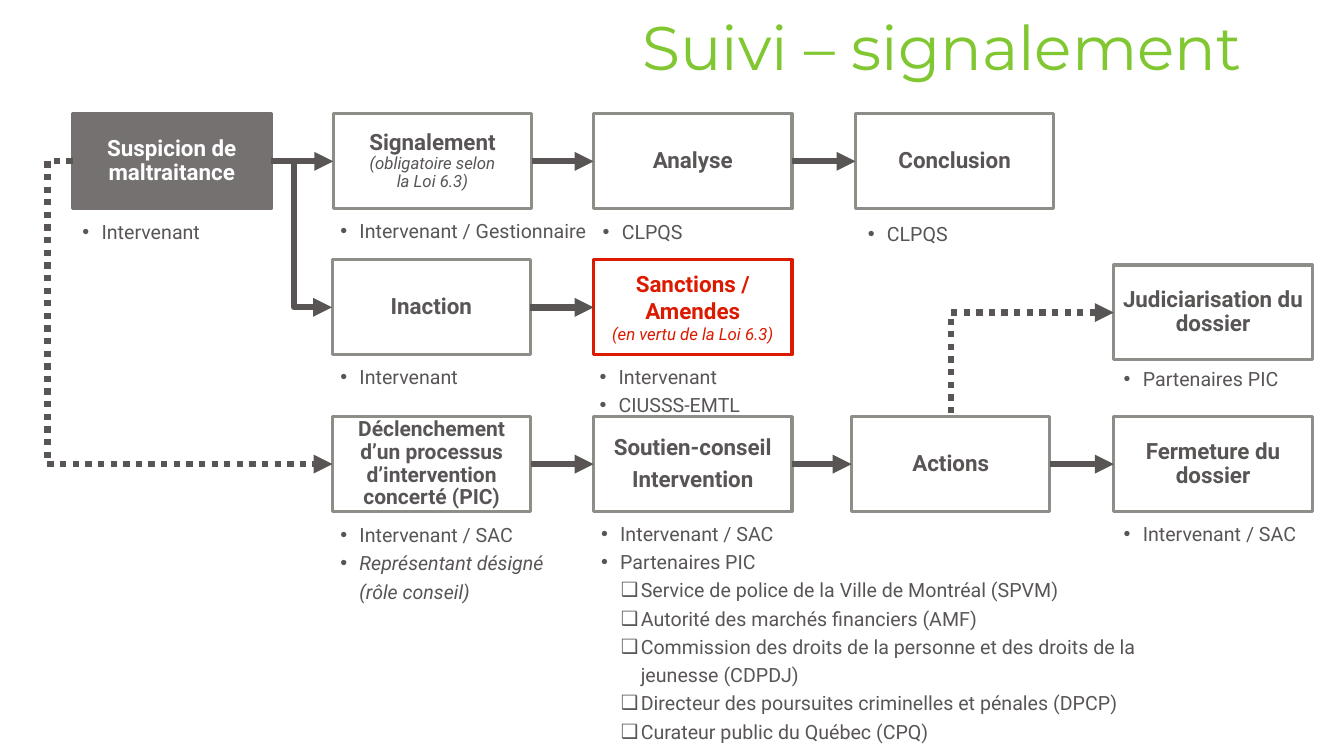
from lxml import etree
from pptx import Presentation
from pptx.dml.color import RGBColor
from pptx.enum import dml, shapes, text
from pptx.oxml import ns
from pptx.util import Cm, Pt

GREY, RED, WHITE = "595555", "DB1A00", "FFFFFF"
BORDER, DARK, GREEN = "8E8E89", "767171", "81C731"
BOX_W, BOX_H = 5, 2.39
TOP, LEFT, RIGHT = 0, 1, 3


def rgb(value):
    return RGBColor.from_string(value)


def add_child(parent, tag, **attrs):
    return etree.SubElement(parent, ns.qn(tag), attrs)


def style(p, size, color, name="Roboto", bold=False, italic=False):
    font = p.font
    font.name, font.size = name, Pt(size)
    font.bold, font.italic = bold, italic
    font.color.rgb = rgb(color)


def add_paragraph(tf, first, content):
    p = tf.paragraphs[0] if first else tf.add_paragraph()
    p.text = content
    return p


def add_title(s, content):
    tf = s.shapes.add_textbox(Cm(4.93), Cm(-0.56), Cm(26.62), Cm(3.68)).text_frame
    tf.word_wrap = True
    tf.vertical_anchor = text.MSO_ANCHOR.MIDDLE
    p = add_paragraph(tf, True, content)
    p.alignment = text.PP_ALIGN.RIGHT
    p.line_spacing = 0.9
    style(p, 44, GREEN, "Montserrat")


def add_box(s, x, y, heads, notes=(), size=16, color=GREY, fill=WHITE,
            border=BORDER, spacing=0.9):
    sp = s.shapes.add_shape(shapes.MSO_SHAPE.RECTANGLE, Cm(x), Cm(y), Cm(BOX_W), Cm(BOX_H))
    sp.shadow.inherit = False
    sp.fill.solid()
    sp.fill.fore_color.rgb = rgb(fill)
    sp.line.color.rgb = rgb(border)
    sp.line.width = Pt(2.25)
    tf = sp.text_frame
    tf.word_wrap = True
    tf.vertical_anchor = text.MSO_ANCHOR.MIDDLE
    tf.margin_left = tf.margin_right = tf.margin_top = tf.margin_bottom = Cm(0.15)
    for i, content in enumerate([*heads, *notes]):
        p = add_paragraph(tf, i == 0, content)
        p.alignment = text.PP_ALIGN.CENTER
        p.line_spacing = spacing
        if i < len(heads) - 1:
            p.space_after = Pt(5.6)
        is_note = i >= len(heads)
        style(p, 12 if is_note else size, color, bold=not is_note, italic=is_note)
    return sp


def add_bullets(s, x, y, w, h, items, subitems=(), italic_item=None):
    tf = s.shapes.add_textbox(Cm(x), Cm(y), Cm(w), Cm(h)).text_frame
    tf.word_wrap = True
    for i, content in enumerate([*items, *subitems]):
        p = add_paragraph(tf, i == 0, content)
        p.line_spacing = 1.2
        margin, hang, mark = (0.48, 0.48, "•") if i < len(items) else (1, 0.5, "❑")
        pPr = p._p.get_or_add_pPr()
        pPr.set("marL", str(Cm(margin)))
        pPr.set("indent", str(-Cm(hang)))
        add_child(pPr, "a:buFont", typeface="Arial")
        add_child(pPr, "a:buChar", char=mark)
        style(p, 14, GREY, italic=content == italic_item)


def add_arrow(s, start, end, kind=shapes.MSO_CONNECTOR.STRAIGHT, sites=(RIGHT, LEFT),
              dotted=False, bend=None, preset=None, arrow="a:tailEnd"):
    c = s.shapes.add_connector(kind, 0, 0, 0, 0)
    c.begin_connect(start, sites[0])
    c.end_connect(end, sites[1])
    c.line.color.rgb = rgb(GREY)
    c.line.width = Pt(4.5)
    if dotted:
        c.line.dash_style = dml.MSO_LINE.ROUND_DOT
    spPr = c._element.spPr
    add_child(spPr.find(ns.qn("a:ln")), arrow, type="triangle")
    add_child(spPr, "a:effectLst")
    geom = spPr.find(ns.qn("a:prstGeom"))
    if preset:
        geom.set("prst", preset)
    if bend is not None:
        add_child(geom.find(ns.qn("a:avLst")), "a:gd", name="adj1", fmla=f"val {bend}")


def main():
    prs = Presentation()
    prs.slide_width, prs.slide_height = Cm(33.87), Cm(19.05)
    s = prs.slides.add_slide(prs.slide_layouts[6])
    add_title(s, "Suivi – signalement")

    row1, row2, row3 = 2.87, 6.55, 10.5
    suspicion = add_box(s, 1.83, row1, ["Suspicion de maltraitance"],
                        color=WHITE, fill=DARK, border=DARK)
    signalement = add_box(s, 8.4, row1, ["Signalement"],
                          ["(obligatoire selon", "la Loi 6.3)"])
    analyse = add_box(s, 14.96, row1, ["Analyse"])
    conclusion = add_box(s, 21.56, row1, ["Conclusion"])
    inaction = add_box(s, 8.37, row2, ["Inaction"])
    sanctions = add_box(s, 14.96, row2, ["Sanctions / Amendes"], ["(en vertu de la Loi 6.3)"],
                        color=RED, border=RED, spacing=1)
    pic = add_box(s, 8.38, row3,
                  ["Déclenchement d’un processus d’intervention concerté (PIC)"], size=15)
    soutien = add_box(s, 14.96, row3, ["Soutien-conseil", "Intervention"])
    actions = add_box(s, 21.46, row3, ["Actions"])
    judiciarisation = add_box(s, 28.07, 6.68, ["Judiciarisation du dossier"])
    fermeture = add_box(s, 28.07, row3, ["Fermeture du dossier"])

    for start, end in [(suspicion, signalement), (signalement, analyse),
                       (analyse, conclusion), (inaction, sanctions), (pic, soutien),
                       (soutien, actions), (actions, fermeture)]:
        add_arrow(s, start, end)
    elbow = shapes.MSO_CONNECTOR.ELBOW
    add_arrow(s, suspicion, inaction, elbow, bend=37900)
    add_arrow(s, suspicion, pic, elbow, (LEFT, LEFT), dotted=True, bend=-9700)
    add_arrow(s, judiciarisation, actions, elbow, (LEFT, TOP), dotted=True,
              preset="bentConnector2", arrow="a:headEnd")

    designated = "Représentant désigné (rôle conseil)"
    add_bullets(s, 1.83, 5.31, 5.1, 0.92, ["Intervenant"])
    add_bullets(s, 8.33, 5.27, 7.06, 0.92, ["Intervenant / Gestionnaire"])
    add_bullets(s, 14.94, 5.3, 4.04, 0.92, ["CLPQS"])
    add_bullets(s, 21.62, 5.34, 4, 0.92, ["CLPQS"])
    add_bullets(s, 8.33, 8.95, 4.04, 0.92, ["Intervenant"])
    add_bullets(s, 14.86, 8.95, 5.6, 1.63, ["Intervenant", "CIUSSS-EMTL"])
    add_bullets(s, 28.07, 9, 5, 0.92, ["Partenaires PIC"])
    add_bullets(s, 8.33, 12.94, 5.87, 2.34, ["Intervenant / SAC", designated],
                italic_item=designated)
    add_bullets(s, 28.07, 12.91, 5, 0.92, ["Intervenant / SAC"])
    add_bullets(s, 14.9, 12.91, 14.3, 5.94, ["Intervenant / SAC", "Partenaires PIC"], [
        "Service de police de la Ville de Montréal (SPVM)",
        "Autorité des marchés financiers (AMF)",
        "Commission des droits de la personne et des droits de la jeunesse (CDPDJ)",
        "Directeur des poursuites criminelles et pénales (DPCP)",
        "Curateur public du Québec (CPQ)"])
    prs.save("out.pptx")


if __name__ == "__main__":
    main()
